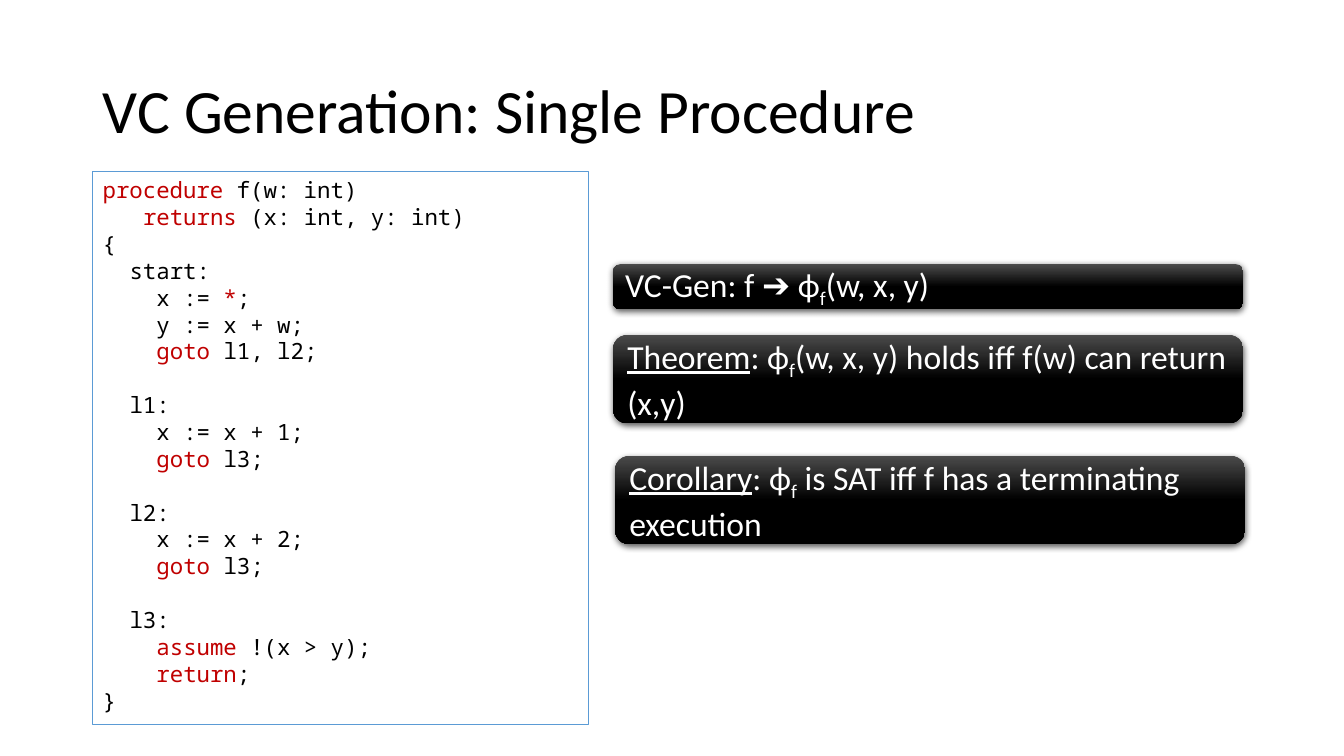
import dataclasses

import lxml.etree
import pptx
import pptx.dml.color
import pptx.enum.shapes
import pptx.enum.text
import pptx.oxml.ns
import pptx.util

Inches = pptx.util.Inches
Pt = pptx.util.Pt
SHAPES = pptx.enum.shapes.MSO_SHAPE
LEFT = pptx.enum.text.PP_ALIGN.LEFT
TOP = pptx.enum.text.MSO_ANCHOR.TOP
MIDDLE = pptx.enum.text.MSO_ANCHOR.MIDDLE


@dataclasses.dataclass(frozen=True)
class Theme:
    text_font: str = "Calibri"
    code_font: str = "Noto Sans Mono"
    title_size: int = 44
    claim_size: int = 24
    code_size: int = 16
    ink: str = "000000"
    paper: str = "FFFFFF"
    keyword: str = "C00000"
    border: str = "5B9BD5"
    sheen: str = "4B4B4B"


THEME = Theme()

# Bars enclose the highlighted parts; leading spaces set the indent.
CODE_BLOCKS = [
    """|procedure| f(w: int)
   |returns| (x: int, y: int)
{
  start:
    x :=| *|;
    y := x + w;
    |goto |l1, l2;""",
    """  l1:
    x := x + 1;
    |goto |l3;""",
    """  l2:
    x := x + 2;
    |goto |l3;""",
    """  l3:
    |assume| !(x > y);
    |return|;
}""",
]
CODE_COLUMN = 0.6 * THEME.code_size
CODE_LINE = 1.2 * THEME.code_size

# left, top, height, underlined label, text before and after the subscript f
CLAIMS = [
    (6.08, 2.62, 0.45, "", "VC-Gen: f ➔ ϕ", "(w, x, y)"),
    (6.08, 3.32, 0.88, "Theorem", ": ϕ", "(w, x, y) holds iff f(w) can return (x,y)"),
    (6.1, 4.52, 0.88, "Corollary", ": ϕ", " is SAT iff f has a terminating execution"),
]
CLAIM_WIDTH = 6.25


def rgb(value):
    return pptx.dml.color.RGBColor.from_string(value)


def add_run(paragraph, text, font, size, color):
    run = paragraph.add_run()
    run.text = text
    run.font.name = font
    run.font.size = Pt(size)
    run.font.color.rgb = rgb(color)
    return run


def add_box(slide, kind, left, top, width, height, anchor):
    """Add a shape without shadow, with wrapped text at the given anchor."""
    shape = slide.shapes.add_shape(
        kind, Inches(left), Inches(top), Inches(width), Inches(height))
    shape.shadow.inherit = False
    shape.text_frame.word_wrap = True
    shape.text_frame.vertical_anchor = anchor
    return shape


def set_title(slide, text):
    title = slide.shapes.title
    title.left, title.top = Inches(0.92), Inches(0.4)
    title.width, title.height = Inches(11.5), Inches(1.45)
    frame = title.text_frame
    frame.auto_size = pptx.enum.text.MSO_AUTO_SIZE.NONE
    frame.vertical_anchor = MIDDLE
    paragraph = frame.paragraphs[0]
    paragraph.alignment = LEFT
    paragraph.line_spacing = 0.9
    add_run(paragraph, text, THEME.text_font, THEME.title_size, THEME.ink)


def add_code_line(paragraph, line):
    paragraph.alignment = LEFT
    code = line.lstrip()
    indent = Pt(CODE_COLUMN * (len(line) - len(code)))
    properties = paragraph._p.get_or_add_pPr()
    properties.set("marL", str(indent))
    properties.set("indent", "0")
    for index, part in enumerate(code.split("|")):
        if part:
            color = THEME.keyword if index % 2 else THEME.ink
            add_run(paragraph, part, THEME.code_font, THEME.code_size, color)


def add_code(slide):
    box = add_box(slide, SHAPES.RECTANGLE, 0.92, 1.7, 4.92, 5.49, TOP)
    box.fill.background()
    box.line.color.rgb = rgb(THEME.border)
    box.line.width = Pt(0.5)
    frame = box.text_frame
    paragraph = frame.paragraphs[0]
    for block_index, block in enumerate(CODE_BLOCKS):
        for line_index, line in enumerate(block.splitlines()):
            if block_index or line_index:
                paragraph = frame.add_paragraph()
            if block_index and line_index == 0:
                paragraph.space_before = Pt(CODE_LINE)
            add_code_line(paragraph, line)


def add_glossy_fill(shape):
    shape.fill.gradient()
    shape.fill.gradient_angle = 270
    stops = shape.fill.gradient_stops
    for stop, position, color in zip(stops, (0, 0.5), (THEME.sheen, THEME.ink)):
        stop.position = position
        stop.color.rgb = rgb(color)


def add_drop_shadow(shape):
    qualified = pptx.oxml.ns.qn
    effects = shape._element.spPr.find(qualified("a:effectLst"))
    shadow = lxml.etree.SubElement(
        effects, qualified("a:outerShdw"), blurRad=str(Pt(4.5)),
        dist=str(Pt(1.5)), dir="5400000", algn="ctr", rotWithShape="0")
    color = lxml.etree.SubElement(shadow, qualified("a:srgbClr"), val=THEME.ink)
    lxml.etree.SubElement(color, qualified("a:alpha"), val="63000")


def add_claim(slide, left, top, height, label, before, after):
    box = add_box(slide, SHAPES.ROUNDED_RECTANGLE, left, top, CLAIM_WIDTH, height, MIDDLE)
    box.line.fill.background()
    add_glossy_fill(box)
    add_drop_shadow(box)
    paragraph = box.text_frame.paragraphs[0]
    paragraph.alignment = LEFT
    style = (THEME.text_font, THEME.claim_size, THEME.paper)
    if label:
        add_run(paragraph, label, *style).font.underline = True
    add_run(paragraph, before, *style)
    subscript = add_run(paragraph, "f", *style)
    subscript._r.get_or_add_rPr().set("baseline", "-25000")
    add_run(paragraph, after, *style)


def main():
    presentation = pptx.Presentation()
    presentation.slide_width = Inches(13.33)
    presentation.slide_height = Inches(7.5)
    slide = presentation.slides.add_slide(presentation.slide_layouts[5])
    set_title(slide, "VC Generation: Single Procedure")
    add_code(slide)
    for claim in CLAIMS:
        add_claim(slide, *claim)
    presentation.save("out.pptx")


if __name__ == "__main__":
    main()
